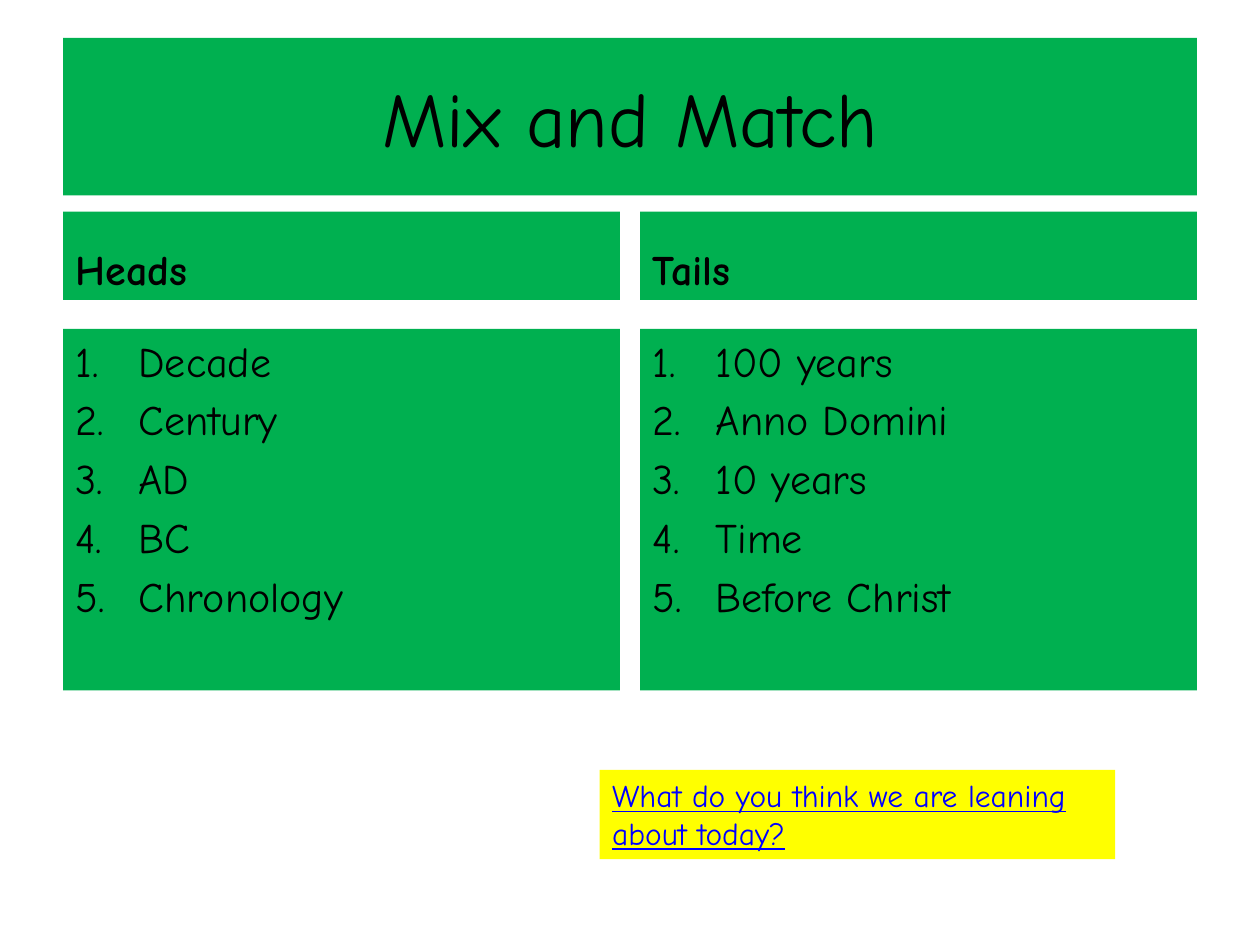
from lxml.etree import SubElement
from pptx import Presentation
from pptx.dml.color import RGBColor
from pptx.enum.text import MSO_ANCHOR as Anchor, MSO_AUTO_SIZE as AutoSize, PP_ALIGN as Align
from pptx.oxml.ns import qn
from pptx.util import Inches, Pt

GREEN = RGBColor(0x00, 0xB0, 0x50)
YELLOW = RGBColor(0xFF, 0xFF, 0x00)
BLACK = RGBColor(0x00, 0x00, 0x00)
BLUE = RGBColor(0x00, 0x00, 0xFF)
FONT = "Comic Neue"

MARGIN, GAP = 0.5, 0.16
FULL_WIDTH = 10 - 2 * MARGIN
COLUMN_WIDTH = (FULL_WIDTH - GAP) / 2
COMPARISON_LAYOUT = 5 - 1
COLUMNS = [
    ("Heads", ["Decade", "Century", "AD", "BC", "Chronology"]),
    ("Tails", ["100 years", "Anno Domini", "10 years", "Time", "Before Christ"]),
]


def place(box, left, top, width, height, fill):
    box.left, box.top = Inches(left), Inches(top)
    box.width, box.height = Inches(width), Inches(height)
    box.fill.solid()
    box.fill.fore_color.rgb = fill


def write(box, lines, size, anchor=Anchor.TOP, color=BLACK, bold=False):
    frame = box.text_frame
    frame.text = "\n".join(lines)
    frame.word_wrap = True
    frame.auto_size = AutoSize.NONE
    frame.vertical_anchor = anchor
    for para in frame.paragraphs:
        font = para.font
        font.name, font.size, font.bold = FONT, Pt(size), bold
        font.color.rgb = color


def number(box):
    """Turn the paragraphs of a box into a numbered list."""
    for index, para in enumerate(box.text_frame.paragraphs):
        para.space_before = Pt(4.8 if index else 0)
        props = para._p.get_or_add_pPr()
        props.set("marL", str(Inches(0.5)))
        props.set("indent", str(Inches(-0.5)))
        bullet = SubElement(props, qn("a:buAutoNum"), type="arabicPeriod")
        props.remove(bullet)
        props.insert_element_before(bullet, "a:tabLst", "a:defRPr", "a:extLst")


def add_title(page, text):
    title = page.shapes.title
    place(title, MARGIN, 0.3, FULL_WIDTH, 1.25, GREEN)
    write(title, [text], 44, Anchor.MIDDLE)
    title.text_frame.paragraphs[0].alignment = Align.CENTER


def fill_column(page, column, heading, items):
    left = MARGIN + column * (COLUMN_WIDTH + GAP)
    head = page.placeholders[1 + 2 * column]
    body = page.placeholders[2 + 2 * column]
    place(head, left, 1.68, COLUMN_WIDTH, 0.7, GREEN)
    write(head, [heading], 24, Anchor.BOTTOM, bold=True)
    place(body, left, 2.61, COLUMN_WIDTH, 2.87, GREEN)
    write(body, items, 24)
    number(body)


def add_question(page, text):
    box = page.shapes.add_textbox(0, 0, 0, 0)
    place(box, 4.76, 6.11, 4.09, 0.71, YELLOW)
    write(box, [text], 18, color=BLUE)
    box.text_frame.auto_size = AutoSize.SHAPE_TO_FIT_TEXT
    box.text_frame.paragraphs[0].font.underline = True


def main():
    deck = Presentation()
    deck.slide_width, deck.slide_height = Inches(10), Inches(7.5)
    page = deck.slides.add_slide(deck.slide_layouts[COMPARISON_LAYOUT])
    add_title(page, "Mix and Match")
    for column, (heading, items) in enumerate(COLUMNS):
        fill_column(page, column, heading, items)
    add_question(page, "What do you think we are leaning about today?")
    deck.save("out.pptx")


if __name__ == "__main__":
    main()
